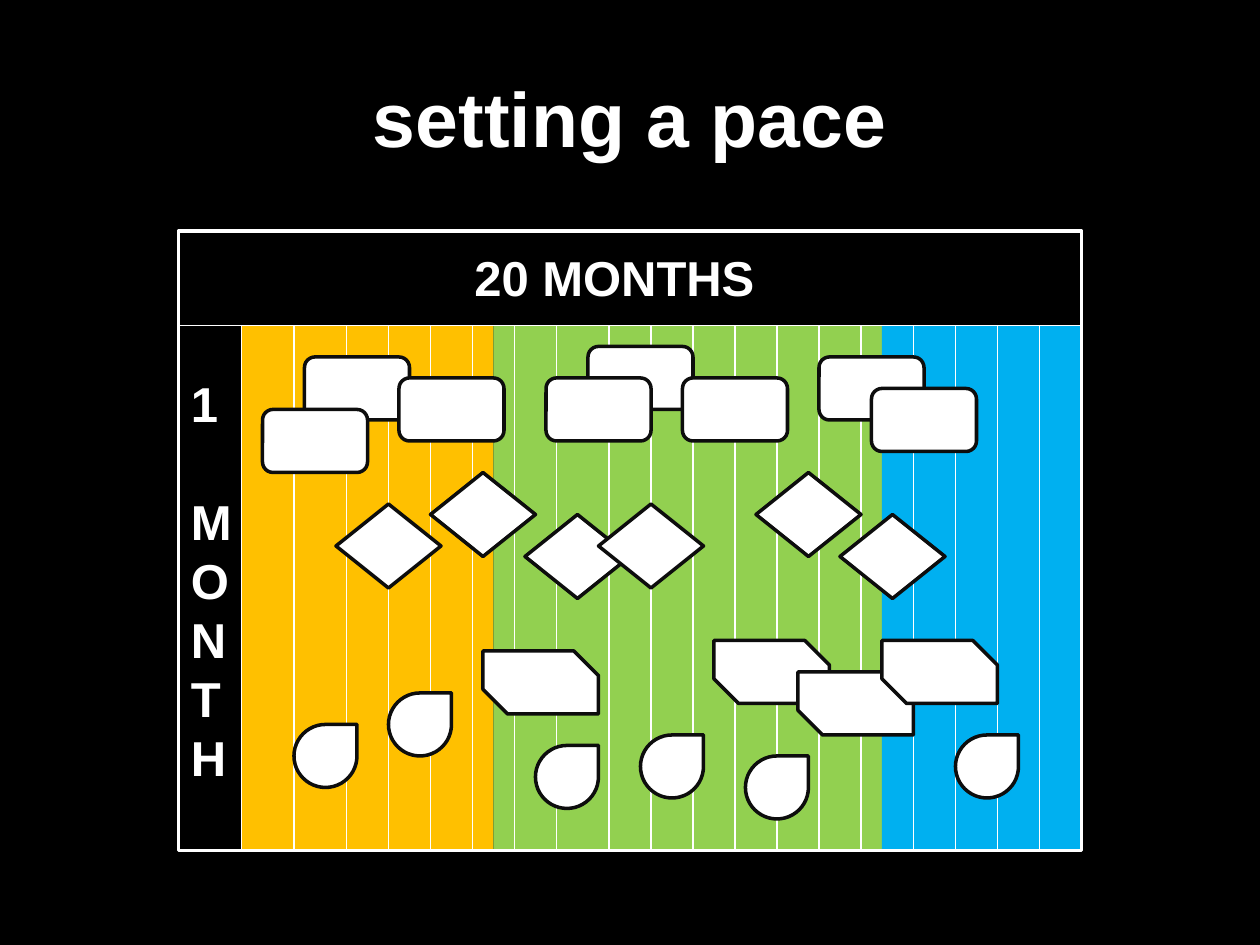
from dataclasses import dataclass
from itertools import accumulate

from lxml.etree import SubElement
from pptx import Presentation
from pptx.dml.color import RGBColor
from pptx.enum.shapes import MSO_CONNECTOR, MSO_SHAPE
from pptx.enum.text import MSO_ANCHOR, PP_ALIGN
from pptx.oxml.ns import qn
from pptx.util import Inches, Pt

BLACK = RGBColor(0x00, 0x00, 0x00)
INK = RGBColor(0x0D, 0x0D, 0x0D)
WHITE = RGBColor(0xFF, 0xFF, 0xFF)
AMBER = RGBColor(0xFF, 0xC0, 0x00)
GREEN = RGBColor(0x92, 0xD0, 0x50)
BLUE = RGBColor(0x00, 0xB0, 0xF0)

# The slide is a grid of 120 columns by 90 rows
COLS, ROWS = 120, 90
CELL = Inches(10) // COLS
LEFT, RIGHT = 17, 103
TOP, HEADER, BOTTOM = 22, 31, 81


@dataclass
class Band:
    start: int
    end: int
    color: RGBColor


@dataclass
class Family:
    """Cards of one outline and size, placed at (column, row) spots."""
    kind: MSO_SHAPE
    width: int
    height: int
    spots: list[tuple[int, int]]
    adjustments: tuple[float, ...] = ()


BANDS = [Band(23, 47, AMBER), Band(47, 84, GREEN), Band(84, 103, BLUE)]

# Month lines stand four columns apart, with a few gaps of five
MONTH_LINES = list(accumulate(
    [23, 5, 5, 4, 4, 4, 4, 4, 5, 4, 4, 4, 4, 4, 4, 5, 4, 4, 4]))

FAMILIES = [
    Family(MSO_SHAPE.ROUNDED_RECTANGLE, 10, 6,
           [(29, 34), (38, 36), (56, 33), (65, 36),
            (78, 34), (25, 39), (52, 36), (83, 37)]),
    Family(MSO_SHAPE.DIAMOND, 10, 8,
           [(32, 48), (41, 45), (50, 49), (57, 48), (72, 45), (80, 49)]),
    Family(MSO_SHAPE.SNIP_2_DIAG_RECTANGLE, 11, 6,
           [(46, 62), (68, 61), (76, 64), (84, 61)], (0, 0.39)),
    Family(MSO_SHAPE.TEAR, 6, 6,
           [(28, 69), (37, 66), (51, 71), (61, 70), (71, 72), (91, 70)]),
]


def add_box(slide, kind: MSO_SHAPE, col: float, row: float, width: float,
            height: float, fill: RGBColor | None = None,
            line: RGBColor | None = None):
    sp = slide.shapes.add_shape(kind, *(int(n * CELL) for n in (col, row, width, height)))
    sp.shadow.inherit = False
    if fill is None:
        sp.fill.background()
    else:
        sp.fill.solid()
        sp.fill.fore_color.rgb = fill
    if line is None:
        sp.line.fill.background()
    else:
        sp.line.color.rgb = line
        sp.line.width = Pt(2)
    return sp


def add_rule(slide, col1: int, row1: int, col2: int, row2: int) -> None:
    cn = slide.shapes.add_connector(
        MSO_CONNECTOR.STRAIGHT, *(n * CELL for n in (col1, row1, col2, row2)))
    cn.line.color.rgb = WHITE
    cn.line.width = Pt(0.75)
    SubElement(cn._element.spPr, qn("a:effectLst"))


def add_text(slide, text: str, col: float, row: float, width: float,
             height: float, size: int, align: PP_ALIGN = PP_ALIGN.LEFT,
             anchor: MSO_ANCHOR = MSO_ANCHOR.TOP):
    sp = slide.shapes.add_textbox(*(int(n * CELL) for n in (col, row, width, height)))
    tf = sp.text_frame
    tf.word_wrap = True
    tf.vertical_anchor = anchor
    tf.text = text
    for p in tf.paragraphs:
        p.alignment = align
        for r in p.runs:
            r.font.name = "Arial"
            r.font.size = Pt(size)
            r.font.bold = True
            r.font.color.rgb = WHITE
    return tf


def main() -> None:
    prs = Presentation()
    prs.slide_width, prs.slide_height = COLS * CELL, ROWS * CELL
    slide = prs.slides.add_slide(prs.slide_layouts[6])
    slide.background.fill.solid()
    slide.background.fill.fore_color.rgb = BLACK

    # Coloured phases
    for band in BANDS:
        add_box(slide, MSO_SHAPE.RECTANGLE, band.start, HEADER,
                band.end - band.start, BOTTOM - HEADER, band.color)

    add_text(slide, "setting a pace", 6, 3.6, 108, 15, 44,
             PP_ALIGN.CENTER, MSO_ANCHOR.MIDDLE)

    # Calendar frame, month lines and labels
    for col in MONTH_LINES:
        add_rule(slide, col, BOTTOM, col, HEADER)
    add_box(slide, MSO_SHAPE.RECTANGLE, LEFT, TOP, RIGHT - LEFT, BOTTOM - TOP,
            line=WHITE)
    add_rule(slide, LEFT, HEADER, RIGHT, HEADER)
    add_text(slide, "20 MONTHS", 44, 23, 30, 6.8, 28)
    # The narrow box stacks the word one letter to a line
    tf = add_text(slide, "1\nMONTH", LEFT, 35, 7, 40.8, 28)
    tf.paragraphs[1].space_before = Pt(34)

    # Cards on the calendar
    for family in FAMILIES:
        for col, row in family.spots:
            sp = add_box(slide, family.kind, col, row, family.width,
                         family.height, WHITE, INK)
            for i, value in enumerate(family.adjustments):
                sp.adjustments[i] = value

    prs.save("out.pptx")


if __name__ == "__main__":
    main()
